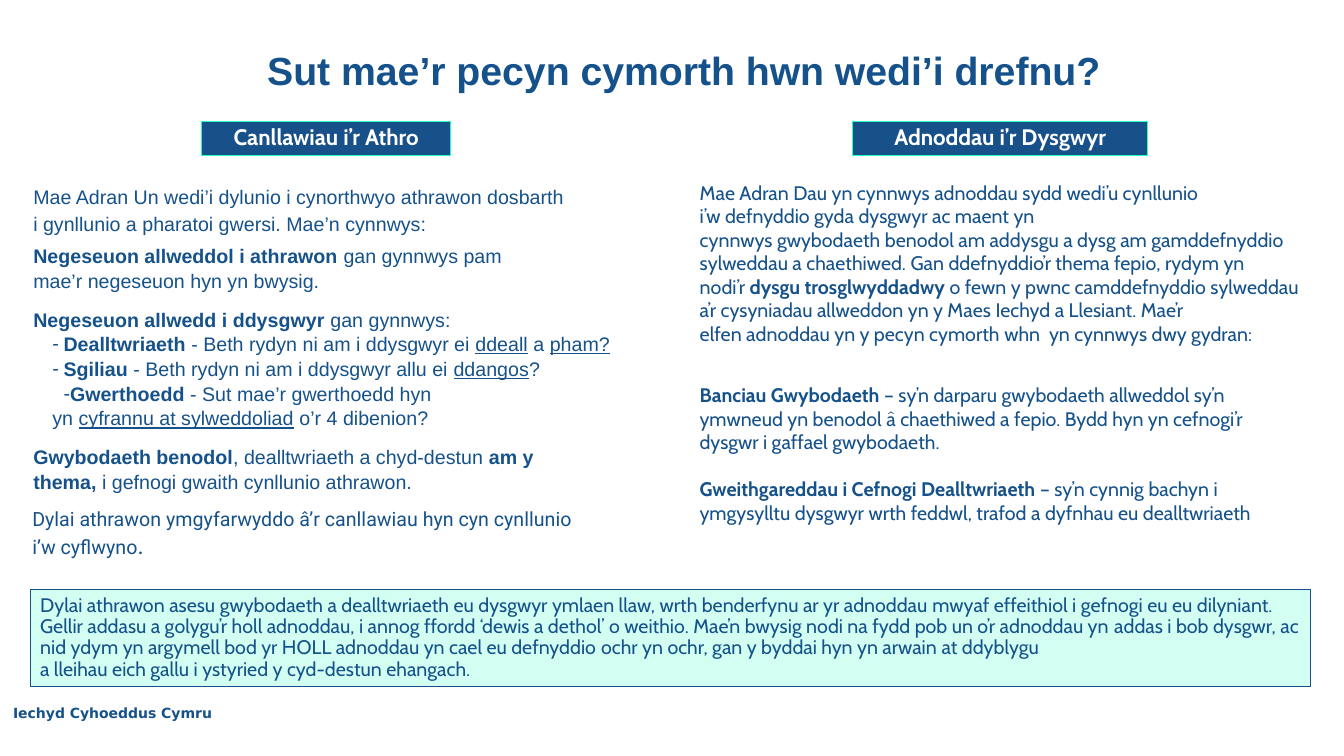
from lxml import etree
from pptx import Presentation
from pptx.dml.color import RGBColor
from pptx.enum.shapes import MSO_SHAPE
from pptx.enum.text import MSO_ANCHOR, MSO_AUTO_SIZE, PP_ALIGN
from pptx.oxml.ns import qn
from pptx.util import Inches, Pt

COLORS = {"navy": "15518A", "label": "18518A", "aqua": "24FFC0",
          "mint": "D3FFF2", "white": "FFFFFF"}
NBSP = chr(160)  # written as ~ in the texts below

# A paragraph is (format, runs); a run is (text, style), with b bold and u underlined.
INTRO = {"indent": (0.01, 0), "line_spacing": 1.17}
GUIDANCE = {"indent": (0.01, 0), "line_spacing": 1.05}
DASHED = {"indent": (0.31, -0.11), "line_spacing": 1.05, "bullet": "-", "level": 1}

TEACHER_GUIDANCE = [
    (INTRO, [("Mae Adran~Un wedi’i dylunio i cynorthwyo athrawon dosbarth "
              "i~gynllunio a pharatoi gwersi.~Mae’n cynnwys:", "")]),
    ({**GUIDANCE, "space_before": 5.3}, [
        ("Negeseuon allweddol i~athrawon~", "b"),
        ("gan gynnwys~pam mae’r~negeseuon hyn yn bwysig.", "")]),
    ({**GUIDANCE, "space_before": 10}, [
        ("Negeseuon~allwedd~i ddysgwyr~", "b"), ("gan gynnwys:", "")]),
    (DASHED, [
        ("Dealltwriaeth~", "b"), ("-~Beth~rydyn ni am i ddysgwyr ei~", ""),
        ("ddeall", "u"), ("~a~", ""), ("pham?", "u")]),
    (DASHED, [
        ("Sgiliau~", "b"), ("-~Beth~rydyn ni am i ddysgwyr allu ei~", ""),
        ("ddangos", "u"), ("?", "")]),
    ({**DASHED, "indent": (0.2, 0.11)}, [
        ("Gwerthoedd~", "b"), ("-~Sut~mae’r gwerthoedd hyn yn~", ""),
        ("cyfrannu~at~sylweddoliad", "u"), ("~o’r~4~dibenion?", "")]),
    ({**GUIDANCE, "space_before": 10}, [
        ("Gwybodaeth benodol", "b"), (",~dealltwriaeth a chyd-destun~", ""),
        ("am y thema,~", "b"), ("i~gefnogi gwaith cynllunio athrawon.", "")]),
    ({"space_before": 10, "font": "Roboto"}, [
        ("Dylai~athrawon ymgyfarwyddo â’r canllawiau hyn cyn cynllunio i’w~cyflwyno", ""),
        (".", "", 17)]),
]

LEARNER_RESOURCES = [({}, [
    ("Mae Adran~Dau~yn cynnwys~adnoddau~sydd wedi’u cynllunio i’w~defnyddio "
     "gyda~dysgwyr~ac maent yn cynnwys~gwybodaeth~benodol~am~addysgu~a~dysg~am "
     "gamddefnyddio sylweddau a~chaethiwed.~Gan ddefnyddio’r thema~fepio, "
     "rydym yn nodi’r~", ""),
    ("dysgu~trosglwyddadwy~", "b"),
    ("o fewn y pwnc~camddefnyddio~sylweddau a’r~cysyniadau allweddon yn y "
     "Maes~Iechyd a~Llesiant.~Mae’r elfen~adnoddau~yn y pecyn cymorth~whn~ yn "
     "cynnwys dwy gydran:", "")])]

COMPONENTS = [
    ({}, [
        ("Banciau~Gwybodaeth~", "b"),
        ("–~sy’n~darparu~gwybodaeth~allweddol sy’n ymwneud yn benodol~â chaethiwed "
         "a~fepio.~Bydd hyn yn cefnogi’r dysgwr i gaffael gwybodaeth.", "")]),
    ({"space_before": 17}, [
        ("Gweithgareddau~i~Cefnogi~Dealltwriaeth~", "b"),
        ("–~sy’n cynnig~bachyn~i ymgysylltu~dysgwyr~wrth feddwl, trafod "
         "a~dyfnhau eu~dealltwriaeth", "")]),
]

ADVICE = [({"line_spacing": 0.9}, [
    ("Dylai athrawon~asesu~gwybodaeth~a~dealltwriaeth~eu~dysgwyr~ymlaen llaw, wrth "
     "benderfynu ar yr adnoddau~mwyaf~effeithiol~i~gefnogi~eu~eu~dilyniant. Gellir "
     "addasu a golygu’r holl adnoddau, i annog ffordd ‘dewis a dethol’ o weithio. "
     "Mae’n bwysig nodi na fydd pob un o’r adnoddau yn~addas i bob dysgwr, ac nid "
     "ydym yn argymell bod yr HOLL adnoddau yn cael eu defnyddio~ochr yn ochr, gan "
     "y byddai hyn yn arwain~at ddyblygu a~lleihau~eich~gallu~i~ystyried~y~cyd-destun "
     "ehangach.", "")])]


def rgb(name):
    return RGBColor.from_string(COLORS[name])


def place(shape, box):
    for name, value in zip(("left", "top", "width", "height"), box):
        setattr(shape, name, Inches(value))


def format_paragraph(paragraph, style):
    values = {
        "alignment": style.get("alignment", PP_ALIGN.LEFT),
        "level": style.get("level", 0),
        "line_spacing": style.get("line_spacing", 1.0),
        "space_before": Pt(style.get("space_before", 0)),
        "space_after": Pt(0),
    }
    for name, value in values.items():
        setattr(paragraph, name, value)
    margin, indent = style.get("indent", (0, 0))
    properties = paragraph._p.get_or_add_pPr()
    properties.set("marL", str(Inches(margin)))
    properties.set("indent", str(Inches(indent)))
    if "bullet" in style:
        etree.SubElement(properties, qn("a:buChar")).set("char", style["bullet"])
    else:
        etree.SubElement(properties, qn("a:buNone"))


def add_run(paragraph, text, style, font, size, color):
    run = paragraph.add_run()
    run.text = text.replace("~", NBSP)
    values = {"name": font, "size": Pt(size), "bold": "b" in style,
              "underline": "u" in style}
    for name, value in values.items():
        setattr(run.font, name, value)
    run.font.color.rgb = rgb(color)


def write(shape, paragraphs, font="Cabin", size=14, color="navy", anchor=MSO_ANCHOR.TOP):
    frame = shape.text_frame
    values = {"word_wrap": True, "auto_size": MSO_AUTO_SIZE.NONE, "vertical_anchor": anchor}
    for name, value in values.items():
        setattr(frame, name, value)
    for number, (style, runs) in enumerate(paragraphs):
        paragraph = frame.add_paragraph() if number else frame.paragraphs[0]
        format_paragraph(paragraph, style)
        for text, emphasis, *own_size in runs:
            add_run(paragraph, text, emphasis, style.get("font", font),
                    own_size[0] if own_size else size, color)


def add_panel(slide, box, fill, line, paragraphs, **text_format):
    panel = slide.shapes.add_shape(MSO_SHAPE.RECTANGLE, *map(Inches, box))
    panel.shadow.inherit = False
    panel.fill.solid()
    panel.fill.fore_color.rgb = rgb(fill)
    panel.line.color.rgb = rgb(line)
    panel.line.width = Pt(0.75)
    write(panel, paragraphs, anchor=MSO_ANCHOR.MIDDLE, **text_format)


def add_label(slide, left, width, text):
    centred = {"alignment": PP_ALIGN.CENTER, "line_spacing": 0.9}
    add_panel(slide, (left, 1.21, width, 0.33), "label", "aqua",
              [(centred, [(text, "b")])], size=16, color="white")


def add_footer(slide, text):
    footer = slide.shapes.add_textbox(*map(Inches, (0.12, 6.99, 2.06, 0.18)))
    for side in ("left", "top", "right", "bottom"):
        setattr(footer.text_frame, f"margin_{side}", 0)
    write(footer, [({"indent": (0.01, 0)}, [(text, "b")])], font="DejaVu Sans", size=10)


def main():
    presentation = Presentation()
    presentation.slide_width = Inches(13.33)
    presentation.slide_height = Inches(7.5)
    slide = presentation.slides.add_slide(presentation.slide_layouts[3])
    title, guidance, resources = slide.placeholders

    place(title, (2.55, 0.41, 8.57, 0.47))
    write(title, [({}, [("Sut~mae’r pecyn cymorth hwn wedi’i drefnu?", "b")])],
          font="Arial", size=28)
    place(guidance, (0.22, 1.74, 6.33, 3.97))
    write(guidance, TEACHER_GUIDANCE, font="Arial")
    place(resources, (6.84, 1.74, 6.16, 1.98))
    write(resources, LEARNER_RESOURCES)
    components = slide.shapes.add_textbox(*map(Inches, (6.84, 3.75, 6.16, 1.51)))
    write(components, COMPONENTS)

    add_label(slide, 2, 2.47, "Canllawiau i’r Athro")
    add_label(slide, 8.46, 2.92, "Adnoddau i’r Dysgwyr")
    add_panel(slide, (0.3, 5.85, 12.7, 0.96), "mint", "label", ADVICE)
    add_footer(slide, "Iechyd Cyhoeddus Cymru")
    presentation.save("out.pptx")


if __name__ == "__main__":
    main()
